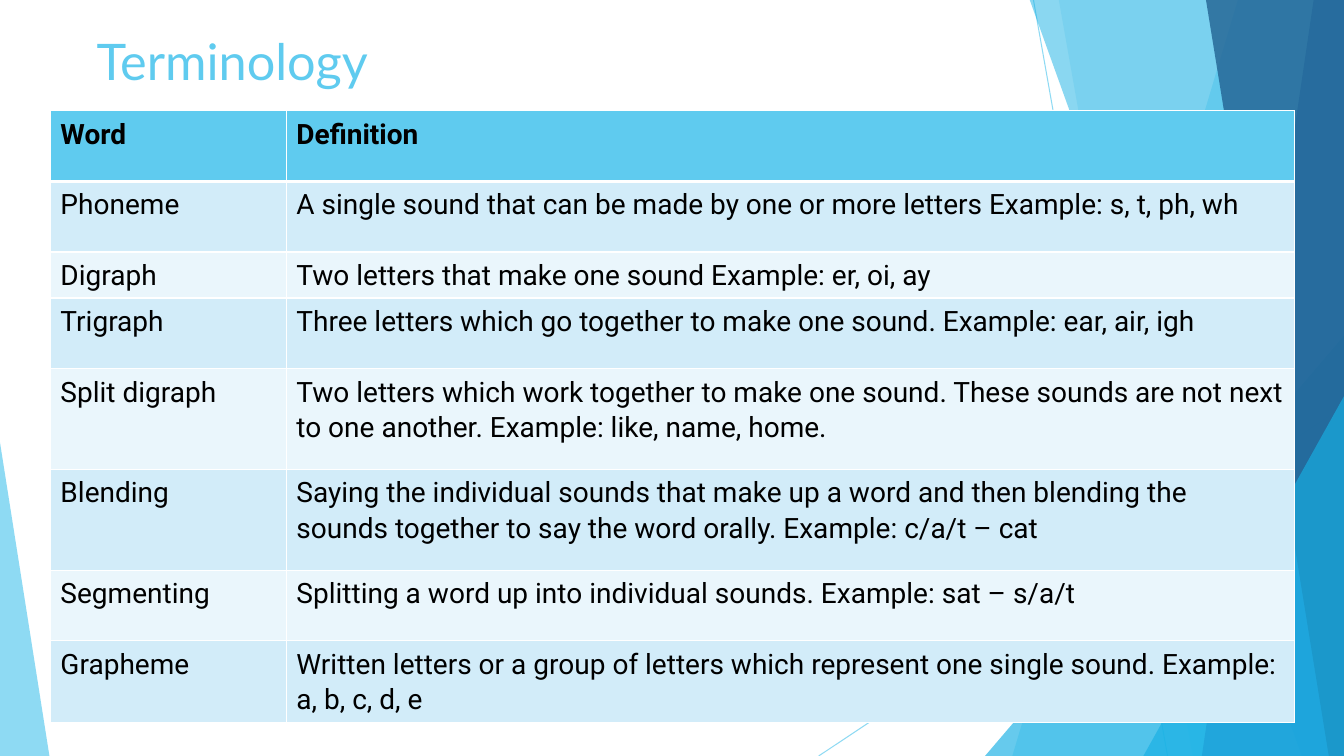
"""Build the phonics terminology slide: faceted backdrop, title and definition table."""
from lxml import etree
from pptx import Presentation, util as u
from pptx.dml.color import RGBColor
from pptx.enum import shapes, text
from pptx.oxml import ns

PX = 9144
THEME = {
    "sky": "5FCBEF", "cyan": "17B0E4", "blue": "2E83C3", "navy": "226292",
    "band": ("EAF6FC", "D2ECF9"), "ink": "000000", "border": "FFFFFF",
    "title_font": "Lato", "body_font": "Roboto", "title_size": 36, "body_size": 20,
}
WIDTH, HEIGHT = 1333, 750


def paint(fill, color, opacity=100):
    """Set a solid fill with an opacity in percent."""
    fill.solid()
    fill.fore_color.rgb = RGBColor.from_string(color)
    if opacity < 100:
        clr = fill._xPr.find(".//" + ns.qn("a:srgbClr"))
        etree.SubElement(clr, ns.qn("a:alpha"), val=str(opacity * 1000))


def add_border(cell, side, points):
    """Add one solid border to a table cell."""
    ln = etree.SubElement(cell._tc.get_or_add_tcPr(), ns.qn(f"a:ln{side}"), w=str(u.Pt(points)))
    fill = etree.SubElement(ln, ns.qn("a:solidFill"))
    etree.SubElement(fill, ns.qn("a:srgbClr"), val=THEME["border"])


prs = Presentation()
prs.slide_width, prs.slide_height = WIDTH * PX, HEIGHT * PX
s = prs.slides.add_slide(prs.slide_layouts[6])

for ends in ((1025, 0, 1158, 750), (1333, 403, 812, 750)):
    line = s.shapes.add_connector(shapes.MSO_CONNECTOR.STRAIGHT, *(v * PX for v in ends))
    line.line.width = u.Pt(0.75)
    paint(line.line.fill, THEME["sky"], 70)
    etree.SubElement(line._element.spPr, ns.qn("a:effectLst"))

facets = [
    ("band", (1228, 1004), "sky", 36),
    ("band", (1050, 1183), "sky", 20),
    ("triangle", (977, 333, 356, 417, 1), "cyan", 66),
    ("band", (1021, 1291), "cyan", 50),
    ("band", (1303, 1192), "blue", 70),
    ("band", (1196, 1318), "navy", 80),
    ("triangle", (1134, 393, 199, 357, 1), "cyan", 66),
    ("triangle", (0, 439, 49, 311, 0), "sky", 70),
]
for kind, geometry, color, opacity in facets:
    if kind == "band":
        top_x, bottom_x = geometry
        outline = s.shapes.build_freeform(top_x, -1, scale=PX)
        outline.add_line_segments([(WIDTH, -1), (WIDTH, HEIGHT), (bottom_x, HEIGHT)])
        sp = outline.convert_to_shape()
    else:
        *box, apex = geometry
        sp = s.shapes.add_shape(shapes.MSO_SHAPE.ISOSCELES_TRIANGLE, *(v * PX for v in box))
        sp.adjustments[0] = apex
    paint(sp.fill, THEME[color], opacity)
    sp.line.fill.background()
    sp.shadow.inherit = False

title = s.shapes.add_textbox(86 * PX, 25 * PX, 1107 * PX, 109 * PX)
tf = title.text_frame
tf.word_wrap = True
tf.vertical_anchor = text.MSO_ANCHOR.TOP
p = tf.paragraphs[0]
p.text = "Terminology"
p.font.name, p.font.size = THEME["title_font"], u.Pt(THEME["title_size"])
p.font.color.rgb = RGBColor.from_string(THEME["sky"])

rows = [
    (70, "Word", "Definition"),
    (70, "Phoneme", "A single sound that can be made by one or more letters Example: s, t, ph, wh"),
    (40, "Digraph", "Two letters that make one sound Example: er, oi, ay"),
    (70, "Trigraph", "Three letters which go together to make one sound. Example: ear, air, igh"),
    (100, "Split digraph", "Two letters which work together to make one sound. "
     "These sounds are not next to one another. Example: like, name, home."),
    (100, "Blending", "Saying the individual sounds that make up a word and then "
     "blending the sounds together to say the word orally. Example: c/a/t – cat"),
    (70, "Segmenting", "Splitting a word up into individual sounds. Example: sat – s/a/t"),
    (70, "Grapheme", "Written letters or a group of letters which represent one single sound. "
     "Example: a, b, c, d, e"),
]
height = sum(row[0] for row in rows)
table = s.shapes.add_table(len(rows), 2, 50 * PX, 110 * PX, 1234 * PX, height * PX).table
table.horz_banding = False
for column, width in zip(table.columns, (234, 1000)):
    column.width = width * PX

for i, (row_height, *entries) in enumerate(rows):
    table.rows[i].height = row_height * PX
    for cell, entry in zip(table.rows[i].cells, entries):
        for side in "LRTB":
            add_border(cell, side, 3 if (i, side) in ((0, "B"), (1, "T")) else 1)
        paint(cell.fill, THEME["band"][i % 2] if i else THEME["sky"])
        p = cell.text_frame.paragraphs[0]
        p.text = entry
        p.line_spacing, p.space_after = 1.07, u.Pt(8)
        p.font.name, p.font.size = THEME["body_font"], u.Pt(THEME["body_size"])
        p.font.bold = i == 0
        p.font.color.rgb = RGBColor.from_string(THEME["ink"])

prs.save("out.pptx")
